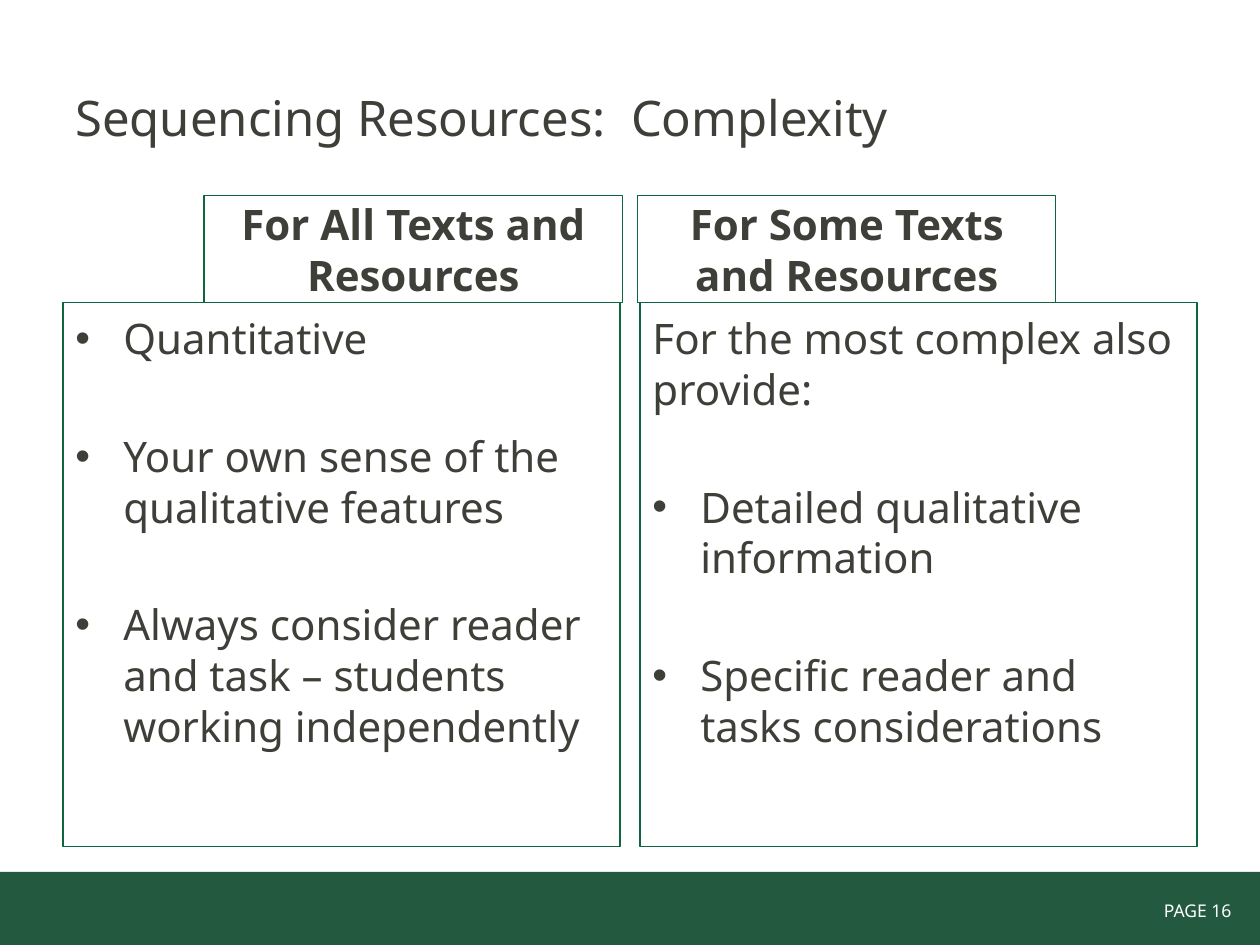
from pptx import Presentation
from pptx.dml.color import RGBColor
from pptx.enum.shapes import MSO_SHAPE
from pptx.enum.text import MSO_ANCHOR, PP_ALIGN
from pptx.util import Inches, Pt
from lxml.etree import SubElement
from pptx.oxml.ns import qn

WHITE = RGBColor(0xFF, 0xFF, 0xFF)
INK = RGBColor(0x3F, 0x3F, 0x39)
BORDER = RGBColor(0x0E, 0x66, 0x41)
FOOTER_GREEN = RGBColor(0x23, 0x59, 0x3E)
FONT = "Noto Sans"

MARGIN = 0.5
COLUMN_WIDTH = 4.42
HEADING_WIDTH, HEADING_HEIGHT = 3.32, 0.85
HEADING_TOP = 1.55
BODY_TOP = HEADING_TOP + HEADING_HEIGHT
BODY_HEIGHT = 4.32
HANGING = Inches(0.38)


def add_text(holder, paragraphs, size=24, color=INK, bold=False, align=PP_ALIGN.LEFT,
             anchor=MSO_ANCHOR.TOP, line_pitch=None, gap=0, top=0.05, bottom=0.05):
    """Fill a shape with paragraphs; those starting with a bullet sign become list items."""
    frame = holder.text_frame
    frame.word_wrap = True
    frame.vertical_anchor = anchor
    frame.margin_top, frame.margin_bottom = Inches(top), Inches(bottom)
    for index, text in enumerate(paragraphs):
        paragraph = frame.add_paragraph() if index else frame.paragraphs[0]
        paragraph.alignment = align
        if line_pitch:
            paragraph.line_spacing = Pt(line_pitch)
        if index:
            paragraph.space_before = Pt(gap)
        if text.startswith("•"):
            properties = paragraph._p.get_or_add_pPr()
            properties.set("marL", str(HANGING))
            properties.set("indent", str(-HANGING))
            SubElement(properties, qn("a:buFont"), typeface="Arial")
            SubElement(properties, qn("a:buChar"), char="•")
        run = paragraph.add_run()
        run.text = text.removeprefix("•")
        run.font.name, run.font.size, run.font.bold = FONT, Pt(size), bold
        run.font.color.rgb = color


def add_box(left, top, width, height, fill=None, line=None):
    box = slide.shapes.add_shape(MSO_SHAPE.RECTANGLE, Inches(left), Inches(top),
                                 Inches(width), Inches(height))
    box.shadow.inherit = False
    if fill:
        box.fill.solid()
        box.fill.fore_color.rgb = fill
    else:
        box.fill.background()
    if line:
        box.line.color.rgb = line
        box.line.width = Pt(0.75)
    else:
        box.line.fill.background()
    return box


prs = Presentation()
prs.slide_width, prs.slide_height = Inches(10), Inches(7.5)
slide = prs.slides.add_slide(prs.slide_layouts[6])

add_box(0, 6.92, 10, 0.58, fill=FOOTER_GREEN)
page_number = slide.shapes.add_textbox(Inches(8.28), Inches(7.09), Inches(1.59), Inches(0.27))
add_text(page_number, ["PAGE 16"], size=10, color=WHITE, align=PP_ALIGN.RIGHT)

title = slide.shapes.add_textbox(Inches(MARGIN), Inches(0.3), Inches(9), Inches(1.25))
add_text(title, ["Sequencing Resources:  Complexity"], size=28, anchor=MSO_ANCHOR.MIDDLE)

columns = [
    (1.62, MARGIN, "For All Texts and Resources",
     ["•Quantitative",
      "•Your own sense of the qualitative features",
      "•Always consider reader and task – students working independently"]),
    (5.06, 10 - MARGIN - COLUMN_WIDTH, "For Some Texts and Resources",
     ["For the most complex also provide:",
      "•Detailed qualitative information",
      "•Specific reader and tasks considerations"]),
]
for heading_left, body_left, heading, points in columns:
    heading_box = add_box(heading_left, HEADING_TOP, HEADING_WIDTH, HEADING_HEIGHT, line=BORDER)
    add_text(heading_box, [heading], bold=True, align=PP_ALIGN.CENTER,
             anchor=MSO_ANCHOR.BOTTOM, line_pitch=28.9, top=0, bottom=0.02)
    body_box = add_box(body_left, BODY_TOP, COLUMN_WIDTH, BODY_HEIGHT, line=BORDER)
    add_text(body_box, points, line_pitch=28.9, gap=38.4, top=0.08)

prs.save("out.pptx")
